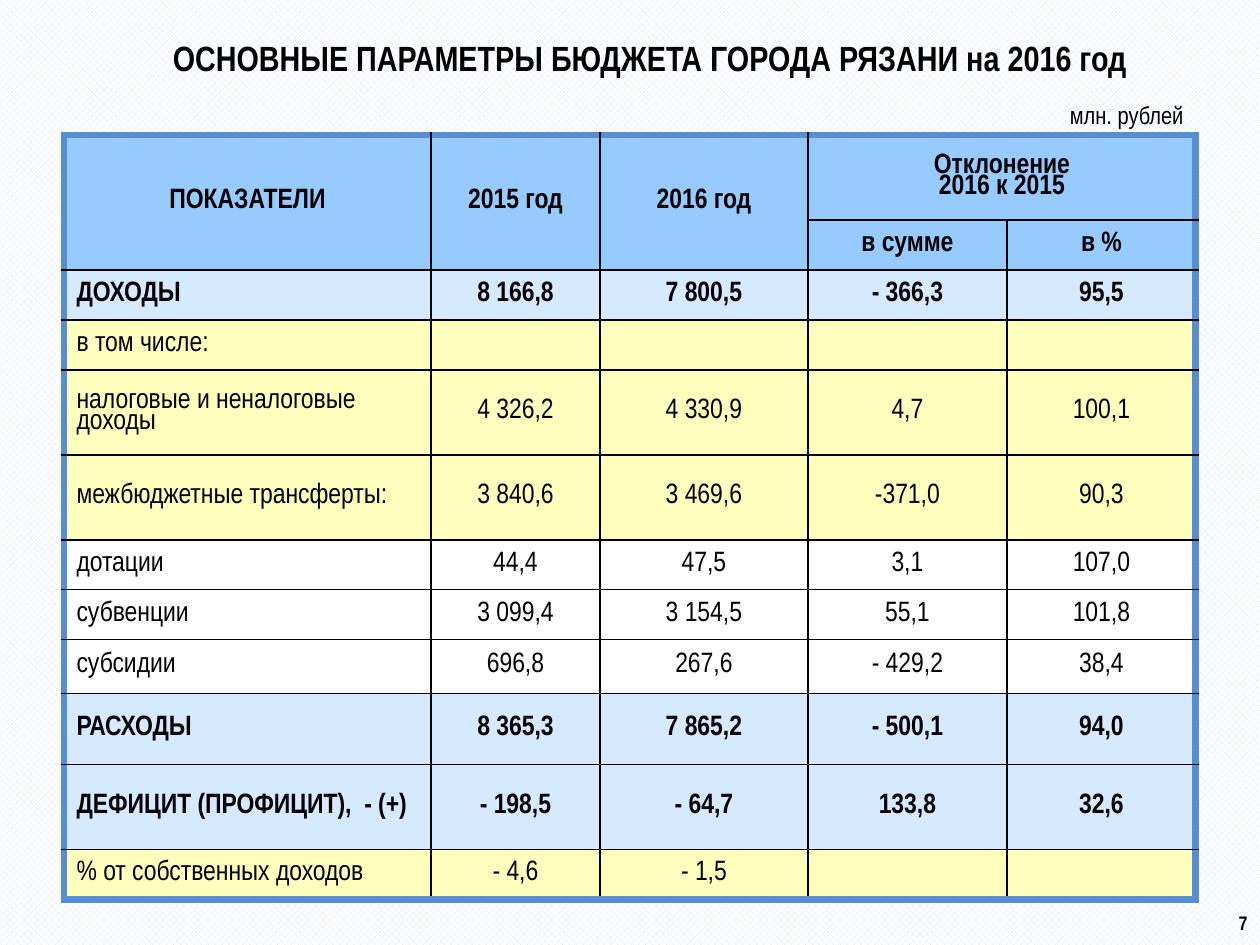
from dataclasses import dataclass

from lxml import etree
from pptx import Presentation
from pptx import util as u
from pptx.dml.color import RGBColor
from pptx.enum import dml, text
from pptx.oxml import ns

SCALE = 914400 / 126
FONT = "Arial Narrow"
COLORS = {
    "ink": "000000", "frame": "558ED5", "head": "97CBFF", "total": "D5EAFF",
    "part": "FFFFBD", "plain": "FFFFFF", "check": "DCE6F2",
}
LEFT, MID, RIGHT = text.PP_ALIGN.LEFT, text.PP_ALIGN.CENTER, text.PP_ALIGN.RIGHT
COLS = [367, 169, 208, 199, 189]


@dataclass
class Row:
    high: int
    fill: str
    cells: tuple
    bold: bool = False


ROWS = [
    Row(85, "head", ("ПОКАЗАТЕЛИ", "2015 год", "2016 год", "Отклонение\n2016 к 2015", ""), True),
    Row(50, "head", ("", "", "", "в сумме", "в %"), True),
    Row(50, "total", ("ДОХОДЫ", "8 166,8", "7 800,5", "- 366,3", "95,5"), True),
    Row(50, "part", ("в том числе:", "", "", "", "")),
    Row(85, "part", ("налоговые и неналоговые доходы", "4 326,2", "4 330,9", "4,7", "100,1")),
    Row(85, "part", ("межбюджетные трансферты:", "3 840,6", "3 469,6", "-371,0", "90,3")),
    Row(50, "plain", ("дотации", "44,4", "47,5", "3,1", "107,0")),
    Row(50, "plain", ("субвенции", "3 099,4", "3 154,5", "55,1", "101,8")),
    Row(54, "plain", ("субсидии", "696,8", "267,6", "- 429,2", "38,4")),
    Row(71, "total", ("РАСХОДЫ", "8 365,3", "7 865,2", "- 500,1", "94,0"), True),
    Row(85, "total", ("ДЕФИЦИТ (ПРОФИЦИТ),  - (+)", "- 198,5", "- 64,7", "133,8", "32,6"), True),
    Row(50, "part", ("% от собственных доходов", "- 4,6", "- 1,5", "", "")),
]


def px(n: int) -> u.Emu:
    return u.Emu(round(n * SCALE))


def rgb(name: str) -> RGBColor:
    return RGBColor.from_string(COLORS[name])


def write(frame, words: str, size: int = 16, bold: bool = False, align=MID,
          space: float = 1.0, small: bool = False,
          anchor=text.MSO_ANCHOR.MIDDLE) -> None:
    frame.word_wrap = True
    frame.vertical_anchor = anchor
    for i, line in enumerate(words.split("\n")):
        para = frame.add_paragraph() if i else frame.paragraphs[0]
        para.alignment = align
        para.line_spacing = space
        run = para.add_run()
        run.text = line
        run.font.name = FONT
        run.font.size = u.Pt(size)
        run.font.bold = bold
        run.font.color.rgb = rgb("ink")
        if small:
            run.font._element.set("cap", "small")


def label(slide, words: str, x: int, y: int, w: int, h: int, **style) -> None:
    box = slide.shapes.add_textbox(px(x), px(y), px(w), px(h))
    write(box.text_frame, words, **style)


def edge(cell, side: str, outer: bool) -> None:
    wide = u.Pt(4.5 if outer else 1)
    line = etree.SubElement(cell._tc.get_or_add_tcPr(), ns.qn(f"a:ln{side}"), w=str(wide))
    fill = etree.SubElement(line, ns.qn("a:solidFill"))
    etree.SubElement(fill, ns.qn("a:srgbClr"), val=COLORS["frame" if outer else "ink"])


def draw_cell(cell, row: Row, r: int, c: int) -> None:
    if not cell.is_spanned:
        high = cell.span_height if cell.is_merge_origin else 1
        wide = cell.span_width if cell.is_merge_origin else 1
        edge(cell, "L", c == 0)
        edge(cell, "R", c + wide == len(COLS))
        edge(cell, "T", r == 0)
        edge(cell, "B", r + high == len(ROWS))
        align = LEFT if c == 0 and r > 1 else MID
        write(cell.text_frame, row.cells[c], bold=row.bold, align=align, space=0.8)
        cell.vertical_anchor = text.MSO_ANCHOR.MIDDLE
    cell.fill.solid()
    cell.fill.fore_color.rgb = rgb(row.fill)


def draw_table(slide, x: int, y: int) -> None:
    high = sum(row.high for row in ROWS)
    grid = slide.shapes.add_table(len(ROWS), len(COLS), px(x), px(y), px(sum(COLS)), px(high)).table
    grid.first_row = grid.horz_banding = False
    for col, wide in zip(grid.columns, COLS):
        col.width = px(wide)
    for c in range(3):
        grid.cell(0, c).merge(grid.cell(1, c))
    grid.cell(0, 3).merge(grid.cell(0, 4))
    for r, row in enumerate(ROWS):
        grid.rows[r].height = px(row.high)
        for c in range(len(COLS)):
            draw_cell(grid.cell(r, c), row, r, c)


def main() -> None:
    deck = Presentation()
    deck.slide_width, deck.slide_height = px(1260), px(945)
    slide = deck.slides.add_slide(deck.slide_layouts[5])
    back = slide.background.fill
    back.patterned()
    back.pattern = dml.MSO_PATTERN.LARGE_CHECKER_BOARD
    back.fore_color.rgb = rgb("check")
    back.back_color.rgb = rgb("plain")

    title = slide.shapes.title
    title.left, title.top, title.width, title.height = map(px, (35, 21, 1230, 74))
    write(title.text_frame, "ОСНОВНЫЕ ПАРАМЕТРЫ БЮДЖЕТА ГОРОДА РЯЗАНИ на 2016 год", size=20, bold=True)
    draw_table(slide, 64, 135)
    label(slide, "млн. рублей", 1027, 95, 169, 39, size=14, align=RIGHT)
    label(slide, "7", 1176, 900, 84, 44, size=14, bold=True, align=RIGHT,
          small=True, anchor=text.MSO_ANCHOR.TOP)
    deck.save("out.pptx")


if __name__ == "__main__":
    main()
